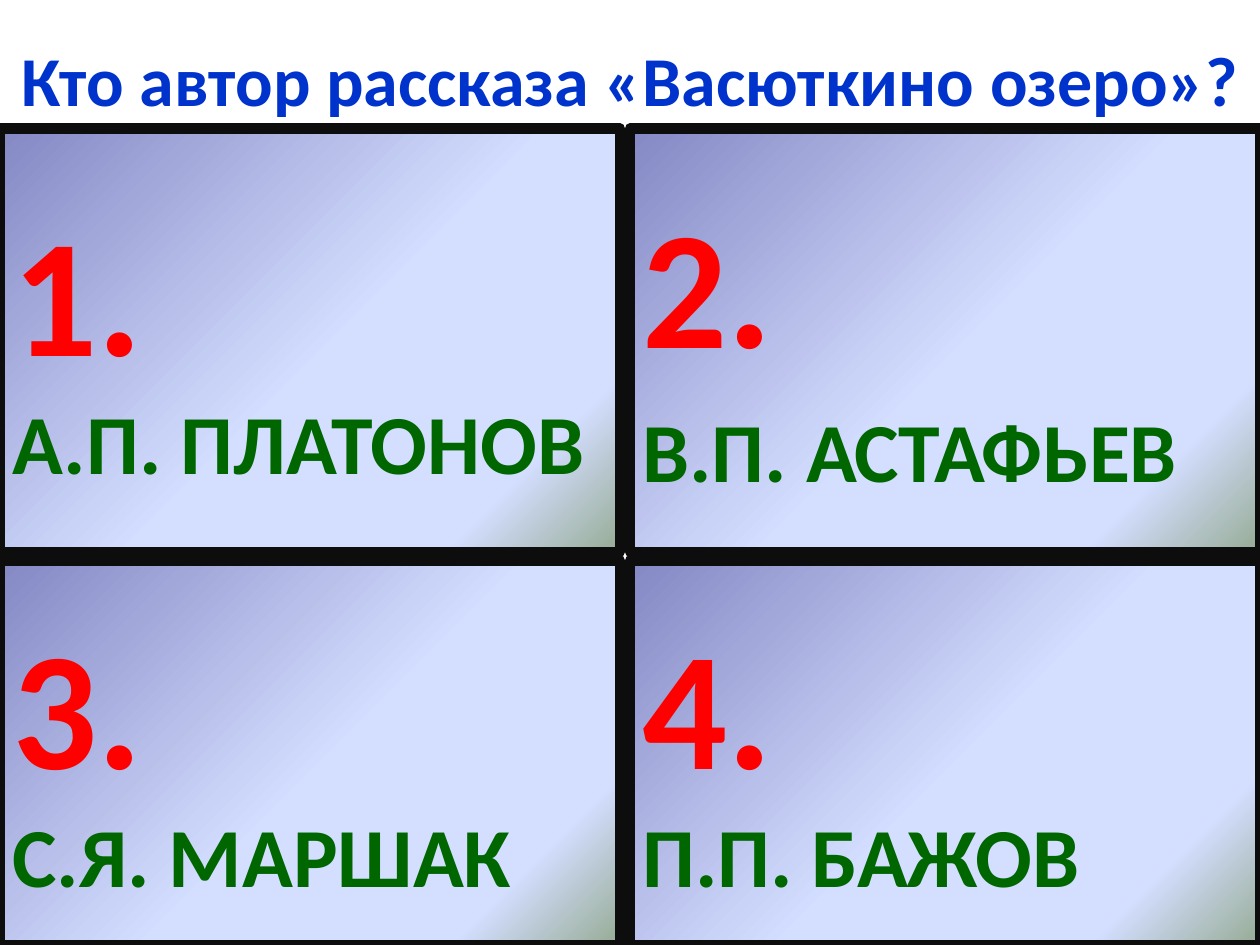
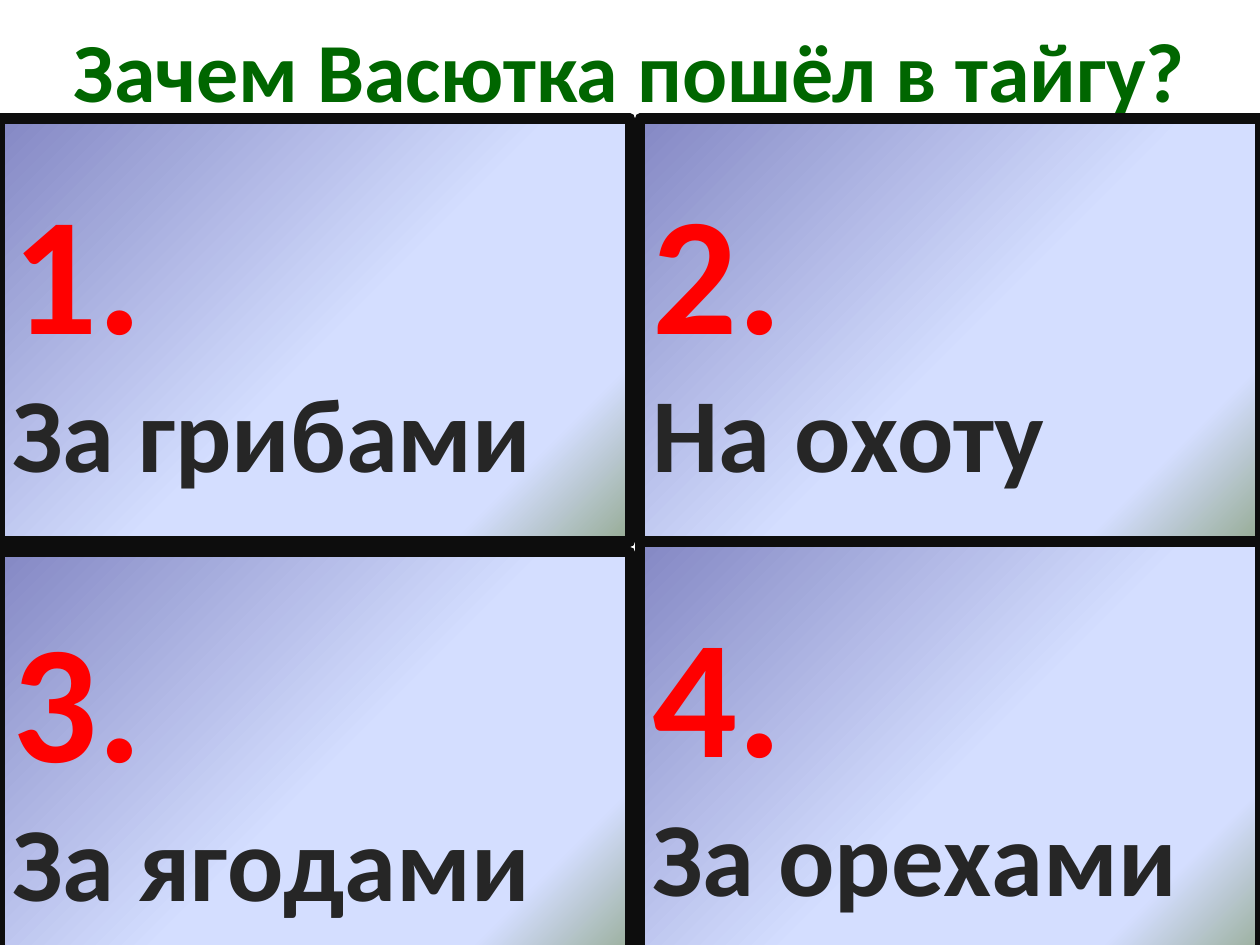
from dataclasses import dataclass

from lxml.etree import SubElement
from pptx import Presentation
from pptx.dml.color import RGBColor
from pptx.enum.shapes import MSO_SHAPE as Preset
from pptx.enum.text import MSO_ANCHOR as Anchor, PP_ALIGN as Align
from pptx.oxml.ns import qn
from pptx.shapes.autoshape import Shape
from pptx.slide import Slide
from pptx.text.text import TextFrame
from pptx.util import Inches, Pt

# Shared style
FONT = "Calibri"
BLUE = RGBColor(0x00, 0x33, 0xCC)
GREEN = RGBColor(0x00, 0x66, 0x00)
RED = RGBColor(0xFF, 0x00, 0x00)
CHARCOAL = RGBColor(0x26, 0x26, 0x26)
BORDER = RGBColor(0x0D, 0x0D, 0x0D)
PERIWINKLE = RGBColor(0x84, 0x88, 0xC4)
PALE_BLUE = RGBColor(0xD4, 0xDE, 0xFF)
SAGE = RGBColor(0x96, 0xAB, 0x94)
PANEL_STOPS = ((0, PERIWINKLE), (53, PALE_BLUE), (83, PALE_BLUE), (100, SAGE))
SLIDE_WIDTH, SLIDE_HEIGHT = 10, 7.5
NUMBER_SIZE = 96


@dataclass(frozen=True)
class Answer:
    text: str
    left: float
    top: float
    width: float
    height: float
    gap: float = 0  # points between the number and the answer


@dataclass(frozen=True)
class Question:
    text: str
    size: int
    color: RGBColor
    height: float
    answer_size: int
    answer_color: RGBColor
    answers: tuple[Answer, ...]


QUESTIONS = (
    Question("Кто автор рассказа «Васюткино озеро»?", 40, BLUE, 1.25, 48, GREEN, (
        Answer("А.П. ПЛАТОНОВ", 0, 1.02, 4.92, 3.36),
        Answer("В.П. АСТАФЬЕВ", 5, 1.02, 5, 3.36, gap=9.6),
        Answer("С.Я. МАРШАК", 0, 4.45, 4.92, 3.05),
        Answer("П.П. БАЖОВ", 5, 4.45, 5, 3.05),
    )),
    Question("Зачем Васютка пошёл в тайгу?", 48, GREEN, 1.09, 60, CHARCOAL, (
        Answer("За грибами", 0, 0.94, 5, 3.36),
        Answer("На охоту", 5.08, 0.94, 4.92, 3.36),
        Answer("За ягодами", 0, 4.38, 5, 3.28),
        Answer("За орехами", 5.08, 4.3, 4.92, 3.36),
    )),
)


def write_line(frame: TextFrame, index: int, text: str, size: int,
               color: RGBColor, align: Align, gap: float = 0) -> None:
    paragraph = frame.add_paragraph() if index else frame.paragraphs[0]
    paragraph.alignment = align
    if gap:
        paragraph.space_before = Pt(gap)
    run = paragraph.add_run()
    run.text = text
    run.font.name = FONT
    run.font.size = Pt(size)
    run.font.bold = True
    run.font.color.rgb = color


def paint_gradient(panel: Shape) -> None:
    panel.fill.gradient()
    panel.fill.gradient_angle = 315  # counter-clockwise: from top left to bottom right
    stops = panel.element.spPr.find(qn("a:gradFill")).find(qn("a:gsLst"))
    for stop in list(stops):
        stops.remove(stop)
    for percent, color in PANEL_STOPS:
        stop = SubElement(stops, qn("a:gs"), pos=str(percent * 1000))
        SubElement(stop, qn("a:srgbClr"), val=str(color))


def add_title(slide: Slide, question: Question) -> None:
    title = slide.shapes.add_textbox(0, 0, Inches(SLIDE_WIDTH), Inches(question.height))
    frame = title.text_frame
    frame.word_wrap = True
    frame.vertical_anchor = Anchor.MIDDLE
    write_line(frame, 0, question.text, question.size, question.color, Align.CENTER)


def add_answer(slide: Slide, number: int, answer: Answer, question: Question) -> None:
    panel = slide.shapes.add_shape(
        Preset.RECTANGLE, Inches(answer.left), Inches(answer.top),
        Inches(answer.width), Inches(answer.height))
    panel.shadow.inherit = False
    paint_gradient(panel)
    panel.line.color.rgb = BORDER
    panel.line.width = Pt(6)
    frame = panel.text_frame
    frame.word_wrap = True
    frame.vertical_anchor = Anchor.MIDDLE
    write_line(frame, 0, f"{number}.", NUMBER_SIZE, RED, Align.LEFT)
    write_line(frame, 1, answer.text, question.answer_size, question.answer_color,
               Align.LEFT, answer.gap)


def main() -> None:
    quiz = Presentation()
    quiz.slide_width = Inches(SLIDE_WIDTH)
    quiz.slide_height = Inches(SLIDE_HEIGHT)
    blank = quiz.slide_layouts[6]
    for question in QUESTIONS:
        slide = quiz.slides.add_slide(blank)
        add_title(slide, question)
        for number, answer in enumerate(question.answers, start=1):
            add_answer(slide, number, answer, question)
    quiz.save("out.pptx")


if __name__ == "__main__":
    main()
